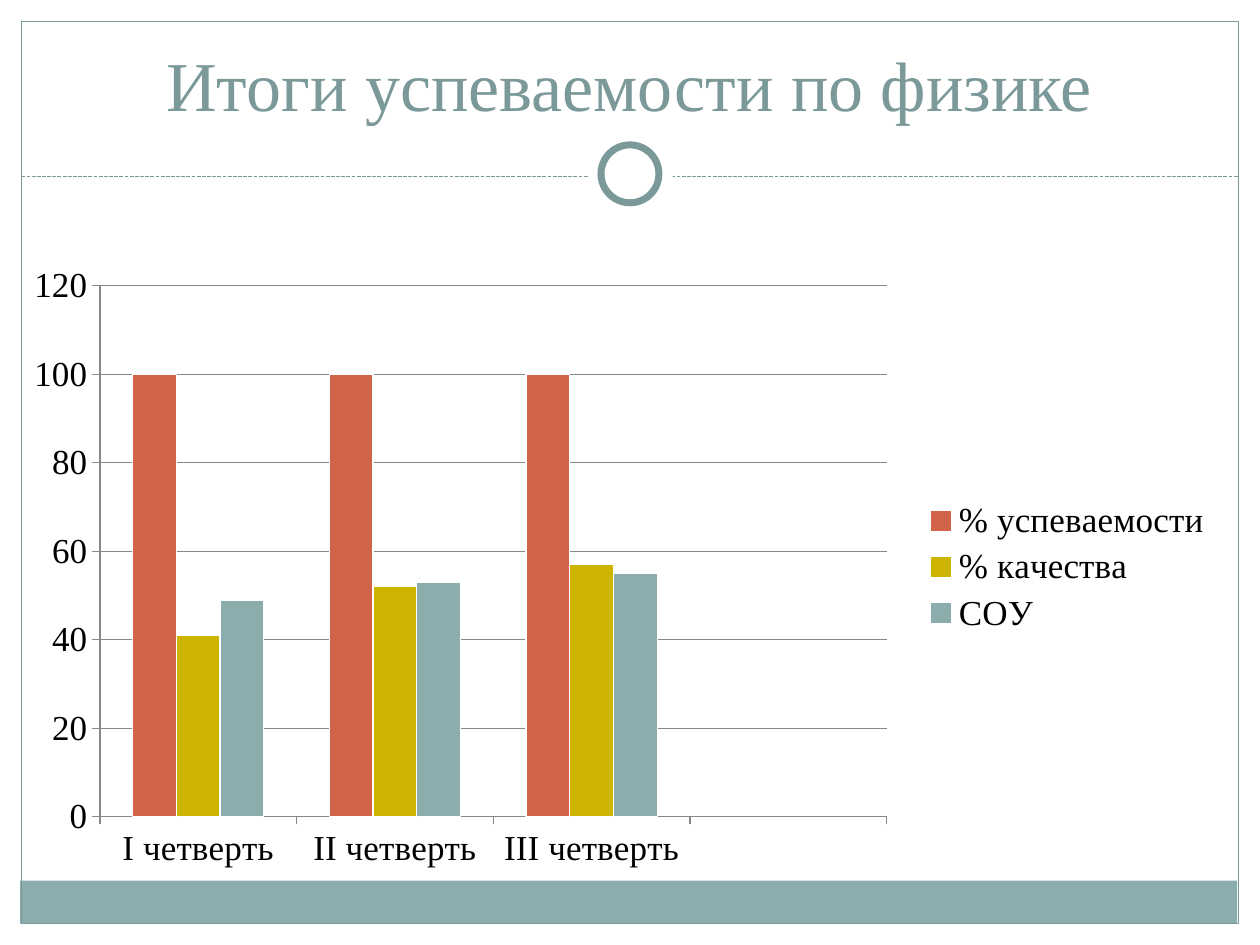
"""Build a slide with a column chart of physics results by school term."""
from lxml.etree import SubElement as Sub
from pptx import Presentation
from pptx.chart.data import CategoryChartData as Data
from pptx.dml.color import RGBColor as RGB
from pptx.enum.chart import XL_CHART_TYPE as Kind, XL_LEGEND_POSITION as Pos, XL_TICK_MARK as Tick
from pptx.enum.dml import MSO_LINE as Dash
from pptx.enum.shapes import MSO_CONNECTOR as Conn, MSO_SHAPE as Form
from pptx.enum.text import MSO_ANCHOR as Anchor, PP_ALIGN as Align
from pptx.oxml.ns import qn
from pptx.util import Inches, Pt

FONT = "Times New Roman"
TEAL, PALE, WHITE, GREY = "7C999A", "8CADAE", "FFFFFF", "878787"


def paint(part, color):
    if hasattr(part, "solid"):
        part.solid()
        part.fore_color.rgb = RGB.from_string(color)
    else:
        part.color.rgb = RGB.from_string(color)


def write(text, box, size=20, color="000000", font=FONT):
    frame = slide.shapes.add_textbox(*map(Inches, box)).text_frame
    frame.word_wrap = True
    frame.vertical_anchor = Anchor.MIDDLE
    para = frame.paragraphs[0]
    para.alignment = Align.CENTER
    run = para.add_run()
    run.text = text
    run.font.size = Pt(size)
    run.font.name = font
    paint(run.font, color)


deck = Presentation()
deck.slide_width, deck.slide_height = Inches(10), Inches(7.5)
slide = deck.slides.add_slide(deck.slide_layouts[6])
paint(slide.background.fill, WHITE)

rule = slide.shapes.add_connector(
    Conn.STRAIGHT, Inches(0.17), Inches(1.4), Inches(9.83), Inches(1.4))
paint(rule.line, TEAL)
rule.line.width = Pt(0.75)
rule.line.dash_style = Dash.SQUARE_DOT
Sub(rule._element.spPr, qn("a:effectLst"))

parts = [
    (Form.RECTANGLE, (0.16, 6.99, 9.66, 0.34), PALE, 0),
    (Form.RECTANGLE, (0.17, 0.17, 9.66, 7.16), None, 0.75),
    (Form.OVAL, (4.67, 1.05, 0.67, 0.67), WHITE, 0),
    (Form.OVAL, (4.77, 1.15, 0.46, 0.46), WHITE, 4),
]
for form, box, fill, width in parts:
    shape = slide.shapes.add_shape(form, *map(Inches, box))
    shape.shadow.inherit = False
    if fill:
        paint(shape.fill, fill)
    else:
        shape.fill.background()
    if width:
        paint(shape.line, TEAL)
        shape.line.width = Pt(width)
    else:
        shape.line.fill.background()

write("Итоги успеваемости по физике", (0.33, 0.25, 9.33, 0.83), size=40, color=TEAL)

data = Data()
data.categories = ["I четверть", "II четверть", "III четверть", ""]
rows = [
    ("% успеваемости", (100, 100, 100, None), "D16349"),
    ("% качества", (41, 52, 57, None), "CCB400"),
    ("СОУ", (49, 53, 55, None), PALE),
]
for name, vals, color in rows:
    data.add_series(name, vals)
area = map(Inches, (0.12, 2.02, 9.61, 4.96))
chart = slide.shapes.add_chart(Kind.COLUMN_CLUSTERED, *area, data).chart
chart.has_title = False
chart.font.name = FONT
chart.font.size = Pt(20)
paint(chart.font, "000000")
chart.has_legend = True
chart.legend.position = Pos.RIGHT
chart.legend.include_in_layout = False

plot = chart.plots[0]
plot.gap_width = 150
plot.overlap = 0
plot.vary_by_categories = False
for series, (name, vals, color) in zip(plot.series, rows):
    paint(series.format.fill, color)
    paint(series.format.line, WHITE)
    series.format.line.width = Pt(0.75)

value = chart.value_axis
value.minimum_scale, value.maximum_scale, value.major_unit = 0, 120, 20
value.has_major_gridlines = True
paint(value.major_gridlines.format.line, GREY)
for axis in (value, chart.category_axis):
    axis.major_tick_mark = Tick.OUTSIDE
    paint(axis.format.line, GREY)

field = chart._chartSpace.chart.plotArea
for old in field.findall(qn("c:layout")):
    field.remove(old)
layout = Sub(field, qn("c:layout"))
field.insert(0, layout)
manual = Sub(layout, qn("c:manualLayout"))
marks = [("layoutTarget", "inner"), ("xMode", "edge"), ("yMode", "edge"),
         ("x", "0.07"), ("y", "0.05"), ("w", "0.65"), ("h", "0.85")]
for tag, val in marks:
    Sub(manual, qn("c:" + tag)).set("val", val)

deck.save("out.pptx")
